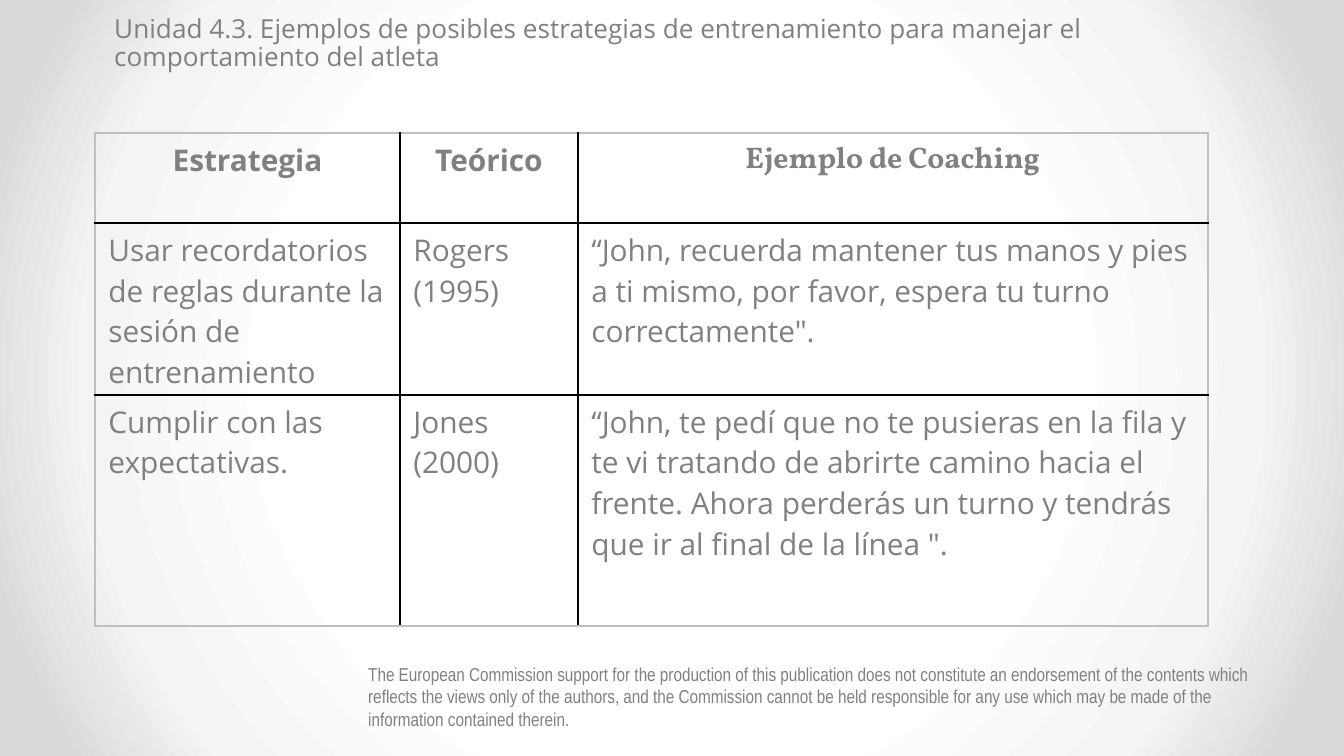
"""Build a slide with a table of coaching strategies for athlete behaviour."""
from typing import NamedTuple

import pptx
import pptx.dml.color
import pptx.enum.text
import pptx.oxml
import pptx.oxml.ns
import pptx.util

SCALE = 9144000 / 1344
COLORS = {"text": "808080", "inner": "000000", "outer": "BFBFBF"}
GLOW = {50: "FFFFFF", 76: "F4F4F4", 92: "DADADA"}
COLS = [305, 178, 630]
ROWS = [90, 172, 231]
ALIGN = pptx.enum.text.PP_ALIGN


class Note(NamedTuple):
    text: str
    left: int
    top: int
    width: int
    height: int
    font: str
    size: int
    space: float


class Plan(NamedTuple):
    task: str
    source: str
    quote: str


NOTES = [
    Note("The European Commission support for the production of this publication does not "
         "constitute an endorsement of the contents which reflects the views only of the "
         "authors, and the Commission cannot be held responsible for any use which may be "
         "made of the information contained therein.",
         355, 656, 931, 90, "Arial Narrow", 10, 1.0),
    Note("Unidad 4.3. Ejemplos de posibles estrategias de entrenamiento para manejar el "
         "comportamiento del atleta",
         101, 9, 1080, 77, "Open Sans", 14, 0.9),
]

PLANS = [
    Plan("Estrategia", "Teórico", "Ejemplo de Coaching"),
    Plan("Usar recordatorios de reglas durante la sesión de entrenamiento", "Rogers (1995)",
         "“John, recuerda mantener tus manos y pies a ti mismo, por favor, espera tu turno "
         "correctamente\"."),
    Plan("Cumplir con las expectativas.", "Jones (2000)",
         "“John, te pedí que no te pusieras en la fila y te vi tratando de abrirte camino "
         "hacia el frente. Ahora perderás un turno y tendrás que ir al final de la línea \"."),
]


def px(count: int) -> int:
    """Turn pixels into EMU."""
    return round(count * SCALE)


def write(frame, text: str, *, font: str = "Open Sans", size: int = 16,
          bold: bool = False, align=ALIGN.LEFT, space: float = 1.0) -> None:
    """Put one formatted paragraph in a text frame."""
    frame.word_wrap = True
    para = frame.paragraphs[0]
    para.alignment = align
    para.line_spacing = space
    run = para.add_run()
    run.text = text
    run.font.name = font
    run.font.size = pptx.util.Pt(size)
    run.font.bold = bold
    run.font.color.rgb = pptx.dml.color.RGBColor.from_string(COLORS["text"])


def paint(slide) -> None:
    """Give the slide a round gradient background."""
    stops = "".join(f'<a:gs pos="{pos * 1000}"><a:srgbClr val="{tone}"/></a:gs>'
                    for pos, tone in GLOW.items())
    back = pptx.oxml.parse_xml(
        f'<p:bg {pptx.oxml.ns.nsdecls("p", "a")}><p:bgPr><a:gradFill rotWithShape="1">'
        f'<a:gsLst>{stops}</a:gsLst><a:path path="circle">'
        '<a:fillToRect l="50000" t="50000" r="50000" b="50000"/></a:path></a:gradFill>'
        '<a:effectLst/></p:bgPr></p:bg>')
    slide.element.cSld.insert(0, back)


def edge(cell, side: str, tone: str) -> None:
    """Draw one border of a cell before its fill."""
    line = pptx.oxml.parse_xml(
        f'<a:{side} {pptx.oxml.ns.nsdecls("a")} w="12700"><a:solidFill>'
        f'<a:srgbClr val="{COLORS[tone]}"/></a:solidFill></a:{side}>')
    props = cell._tc.get_or_add_tcPr()
    props.insert(len(props) - 1, line)


def add_note(slide, note: Note) -> None:
    """Add a text box."""
    box = slide.shapes.add_textbox(*map(px, note[1:5]))
    write(box.text_frame, note.text, font=note.font, size=note.size, space=note.space)


def add_grid(slide, plans: list[Plan]) -> None:
    """Add the table of strategies."""
    shape = slide.shapes.add_table(len(ROWS), len(COLS), px(95), px(133),
                                   px(sum(COLS)), px(sum(ROWS)))
    table = shape.table
    table.first_row = table.horz_banding = False
    for col, width in zip(table.columns, COLS):
        col.width = px(width)
    for row, height in zip(table.rows, ROWS):
        row.height = px(height)
    for r, plan in enumerate(plans):
        for c, text in enumerate(plan):
            cell = table.cell(r, c)
            cell.margin_bottom = 0
            cell.fill.background()
            outer = {"lnL": c == 0, "lnR": c == len(COLS) - 1,
                     "lnT": r == 0, "lnB": r == len(ROWS) - 1}
            for side, rim in outer.items():
                edge(cell, side, "outer" if rim else "inner")
            head = r == 0
            write(cell.text_frame, text, bold=head,
                  font="Vollkorn" if head and c == 2 else "Open Sans",
                  align=ALIGN.CENTER if head else ALIGN.LEFT)


def main() -> None:
    """Build and save the deck."""
    deck = pptx.Presentation()
    deck.slide_width, deck.slide_height = px(1344), px(756)
    slide = deck.slides.add_slide(deck.slide_layouts[6])
    paint(slide)
    add_grid(slide, PLANS)
    for note in NOTES:
        add_note(slide, note)
    deck.save("out.pptx")


if __name__ == "__main__":
    main()
